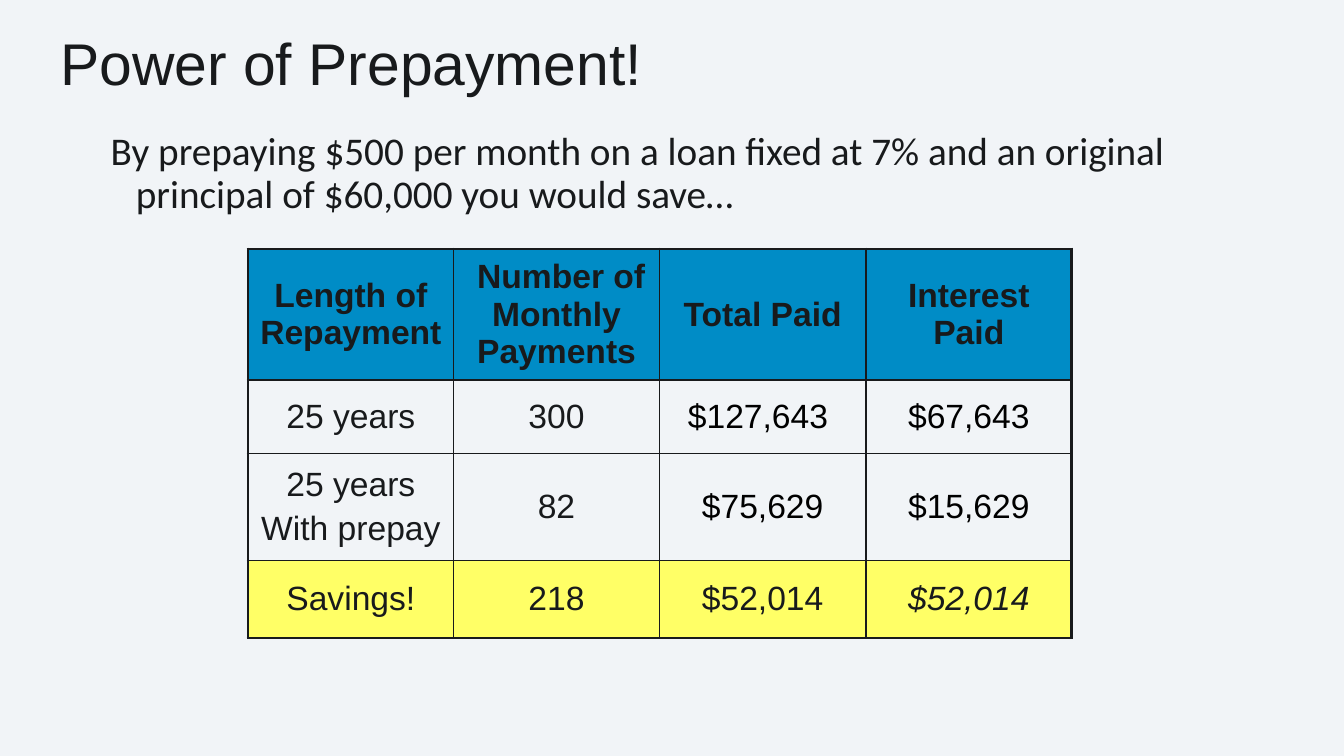
from dataclasses import dataclass
from typing import Optional

from lxml import etree
from pptx import Presentation
from pptx.dml.color import RGBColor
from pptx.enum.text import MSO_ANCHOR, PP_ALIGN
from pptx.oxml.ns import qn
from pptx.util import Inches, Pt

MIDDLE = MSO_ANCHOR.MIDDLE
TOP = MSO_ANCHOR.TOP
CENTER = PP_ALIGN.CENTER

BACKGROUND = RGBColor(0xF1, 0xF4, 0xF7)
INK = RGBColor(0x18, 0x1A, 0x1C)
BLACK = RGBColor(0x00, 0x00, 0x00)
HEADER_BLUE = RGBColor(0x00, 0x8C, 0xC6)
SAVINGS_YELLOW = RGBColor(0xFF, 0xFF, 0x66)

OUTER_LINE = Pt(2.25)
INNER_LINE = Pt(1)
COLUMN_WIDTHS = (2.04, 2.04, 2.05, 2.04)
FIRST_AMOUNT_COLUMN = 2


@dataclass(frozen=True)
class TextBlock:
    text: str
    box: tuple[float, float, float, float]
    font: str
    size: float
    anchor: MSO_ANCHOR


@dataclass(frozen=True)
class LoanRow:
    cells: tuple[str, ...]
    height: float
    fill: Optional[RGBColor] = None
    amount_color: RGBColor = INK
    bold: bool = False
    italic_last: bool = False


TITLE = TextBlock("Power of Prepayment!", (0.5, 0.3, 9, 0.62), "Arial", 42, MIDDLE)
INTRO = TextBlock(
    "By prepaying $500 per month on a loan fixed at 7% and an original "
    "principal of $60,000 you would save…",
    (0.5, 1.26, 12.04, 1.17), "Calibri", 28, TOP,
)
LOAN_ROWS = (
    LoanRow(
        ("Length of Repayment", " Number of Monthly Payments", "Total Paid", "Interest Paid"),
        1.1, fill=HEADER_BLUE, bold=True,
    ),
    LoanRow(("25 years", "300", "$127,643 ", "$67,643"), 0.73, amount_color=BLACK),
    LoanRow(("25 years\nWith prepay", "82", "$75,629", "$15,629"), 1.06, amount_color=BLACK),
    LoanRow(("Savings!", "218", "$52,014", "$52,014"), 0.77,
            fill=SAVINGS_YELLOW, italic_last=True),
)


def style_font(font, color: RGBColor, **values) -> None:
    for attribute, value in values.items():
        setattr(font, attribute, value)
    font.color.rgb = color


def add_text(slide, block: TextBlock):
    frame = slide.shapes.add_textbox(*map(Inches, block.box)).text_frame
    frame.word_wrap = True
    frame.vertical_anchor = block.anchor
    paragraph = frame.paragraphs[0]
    run = paragraph.add_run()
    run.text = block.text
    style_font(run.font, INK, name=block.font, size=Pt(block.size))
    return paragraph


def add_border(cell, side: str, width: int) -> None:
    properties = cell._tc.get_or_add_tcPr()
    line = etree.SubElement(properties, qn(f"a:ln{side}"), w=str(width))
    solid = etree.SubElement(line, qn("a:solidFill"))
    etree.SubElement(solid, qn("a:srgbClr"), val=str(INK))


def fill_cell(cell, row: LoanRow, column: int) -> None:
    cell.vertical_anchor = MIDDLE
    cell.text_frame.text = row.cells[column]
    color = row.amount_color if column >= FIRST_AMOUNT_COLUMN else INK
    italic = row.italic_last and column == len(row.cells) - 1
    for index, paragraph in enumerate(cell.text_frame.paragraphs):
        paragraph.alignment = CENTER
        if index:
            paragraph.space_before = Pt(4.8)
        for run in paragraph.runs:
            style_font(run.font, color, name="Arial", size=Pt(24),
                       bold=row.bold, italic=italic)


def add_loan_table(slide) -> None:
    last_row, last_column = len(LOAN_ROWS) - 1, len(COLUMN_WIDTHS) - 1
    table = slide.shapes.add_table(
        len(LOAN_ROWS), len(COLUMN_WIDTHS), Inches(2.46), Inches(2.47),
        Inches(sum(COLUMN_WIDTHS)), Inches(sum(row.height for row in LOAN_ROWS)),
    ).table
    table.first_row = False
    table.horz_banding = False
    for column, width in enumerate(COLUMN_WIDTHS):
        table.columns[column].width = Inches(width)
    for index, row in enumerate(LOAN_ROWS):
        table.rows[index].height = Inches(row.height)
        for column in range(len(row.cells)):
            cell = table.cell(index, column)
            fill_cell(cell, row, column)
            outer_sides = {
                "L": column == 0,
                "R": column == last_column,
                "T": index == 0,
                "B": index == last_row,
            }
            for side, is_outer in outer_sides.items():
                add_border(cell, side, OUTER_LINE if is_outer else INNER_LINE)
            if row.fill is None:
                cell.fill.background()
            else:
                cell.fill.solid()
                cell.fill.fore_color.rgb = row.fill


def main() -> None:
    presentation = Presentation()
    presentation.slide_width = Inches(13.33)
    presentation.slide_height = Inches(7.5)
    slide = presentation.slides.add_slide(presentation.slide_layouts[6])
    slide.background.fill.solid()
    slide.background.fill.fore_color.rgb = BACKGROUND

    add_text(slide, TITLE)
    intro = add_text(slide, INTRO)
    intro.level = 1
    intro.line_spacing = 0.9
    indents = intro._p.get_or_add_pPr()
    indents.set("marL", str(Inches(0.75)))
    indents.set("indent", str(Inches(-0.25)))
    add_loan_table(slide)

    presentation.save("out.pptx")


if __name__ == "__main__":
    main()
